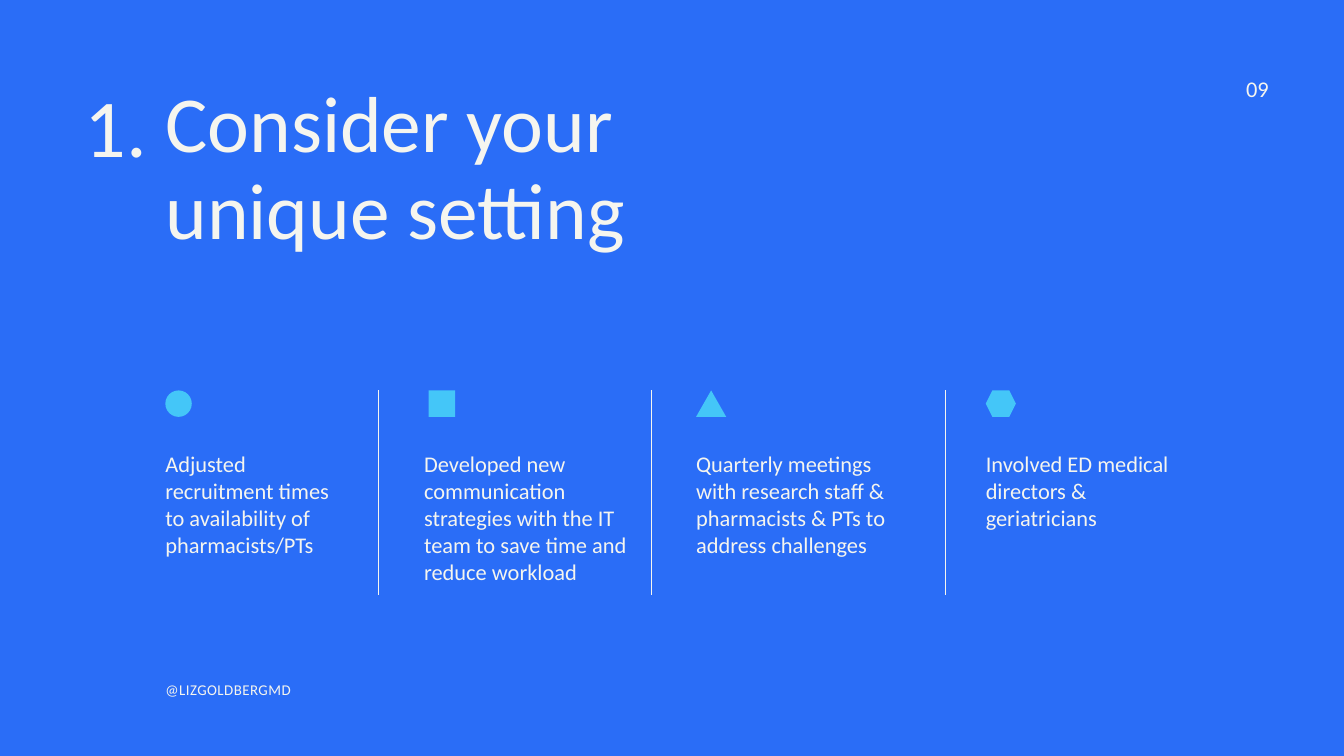
from typing import NamedTuple

from lxml import etree
from pptx import Presentation
from pptx.dml.color import RGBColor
from pptx.enum.shapes import MSO_CONNECTOR, MSO_SHAPE
from pptx.enum.text import MSO_ANCHOR, MSO_AUTO_SIZE, PP_ALIGN
from pptx.oxml.ns import qn
from pptx.shapes.autoshape import Shape
from pptx.slide import Slide
from pptx.util import Cm, Pt

BLUE = RGBColor(0x2A, 0x6D, 0xF7)
CREAM = RGBColor(0xF5, 0xF5, 0xEF)
SKY = RGBColor(0x44, 0xC6, 0xF8)
FONT = "Calibri"

LEFT, CENTER, RIGHT = PP_ALIGN.LEFT, PP_ALIGN.CENTER, PP_ALIGN.RIGHT
TOP = MSO_ANCHOR.TOP
FIXED = MSO_AUTO_SIZE.NONE
STRAIGHT = MSO_CONNECTOR.STRAIGHT
OVAL, SQUARE = MSO_SHAPE.OVAL, MSO_SHAPE.RECTANGLE
PEAK, HEX = MSO_SHAPE.ISOSCELES_TRIANGLE, MSO_SHAPE.HEXAGON

MARGIN = 6.25
ICON_TOP, ICON_SIDE, ICON_WIDE = 14.76, 1, 1.14
TEXT_TOP = 17.02
RULE_TALL = 7.72
RULES = (14.29, 24.63, 35.73)


class Box(NamedTuple):
    left: float
    top: float
    width: float
    height: float


class Style(NamedTuple):
    size: float
    pitch: float
    align: PP_ALIGN = LEFT
    track: int = 0  # letter spacing, hundredths of a point


class Point(NamedTuple):
    left: float
    width: float
    lines: int
    text: str
    icon: MSO_SHAPE
    icon_left: float
    icon_width: float


TITLE = Style(85, 93.5)
NUMBER = Style(88, 105.6, CENTER)
BODY = Style(24, 28.8)
PAGE = Style(24, 24, RIGHT)
HANDLE = Style(16, 22.4, track=50)

POINTS = (
    Point(MARGIN, 6.63, 4,
          "Adjusted recruitment times to availability of pharmacists/PTs",
          OVAL, MARGIN, ICON_SIDE),
    Point(16.03, 7.85, 5,
          "Developed new communication strategies with the IT team "
          "to save time and reduce workload",
          SQUARE, 16.2, ICON_SIDE),
    Point(26.31, 7.85, 4,
          "Quarterly meetings with research staff & pharmacists & PTs "
          "to address challenges",
          PEAK, 26.31, ICON_WIDE),
    Point(37.26, 7.85, 3,
          "Involved ED medical directors & geriatricians",
          HEX, 37.26, ICON_WIDE),
)


def write(shape: Shape, text: str, style: Style) -> None:
    """Fill a shape with one run of text, without insets."""
    frame = shape.text_frame
    frame.word_wrap = True
    frame.auto_size = FIXED
    frame.vertical_anchor = TOP
    frame.margin_left = frame.margin_right = Cm(0)
    frame.margin_top = frame.margin_bottom = Cm(0)
    para = frame.paragraphs[0]
    para.alignment = style.align
    para.line_spacing = Pt(style.pitch)
    run = para.add_run()
    run.text = text
    font = run.font
    font.name = FONT
    font.size = Pt(style.size)
    font.color.rgb = CREAM
    if style.track:
        font._element.set("spc", str(style.track))


def add_text(slide: Slide, box: Box, text: str, style: Style) -> None:
    write(slide.shapes.add_textbox(*map(Cm, box)), text, style)


def add_title(slide: Slide, box: Box, text: str) -> None:
    title = slide.shapes.title
    title.left, title.top, title.width, title.height = map(Cm, box)
    write(title, text, TITLE)


def add_rule(slide: Slide, left: float) -> None:
    """Draw a thin vertical line between two points."""
    rule = slide.shapes.add_connector(
        STRAIGHT, Cm(left), Cm(ICON_TOP), Cm(left), Cm(ICON_TOP + RULE_TALL))
    rule.line.color.rgb = CREAM
    rule.line.width = Pt(0.75)
    etree.SubElement(rule._element.spPr, qn("a:effectLst"))


def add_point(slide: Slide, point: Point) -> None:
    """Draw an icon with its text below."""
    icon = slide.shapes.add_shape(
        point.icon, Cm(point.icon_left), Cm(ICON_TOP),
        Cm(point.icon_width), Cm(ICON_SIDE))
    icon.shadow.inherit = False
    icon.fill.solid()
    icon.fill.fore_color.rgb = SKY
    icon.line.fill.background()
    height = point.lines * Pt(BODY.pitch).cm
    add_text(slide, Box(point.left, TEXT_TOP, point.width, height),
             point.text, BODY)


def main() -> None:
    deck = Presentation()
    deck.slide_width, deck.slide_height = Cm(50.8), Cm(28.58)
    slide = deck.slides.add_slide(deck.slide_layouts.get_by_name("Title Only"))
    back = slide.background.fill
    back.solid()
    back.fore_color.rgb = BLUE

    add_title(slide, Box(MARGIN, 3.07, 22.12, 6.6),
              "Consider your unique setting")
    add_text(slide, Box(2.84, 2.84, 3.07, 3.71), "1.", NUMBER)
    add_text(slide, Box(46.41, 3, 1.55, 0.79), "09", PAGE)
    for left in RULES:
        add_rule(slide, left)
    for point in POINTS:
        add_point(slide, point)
    add_text(slide, Box(MARGIN, 25.6, 19.13, 0.76), "@LIZGOLDBERGMD", HANDLE)
    deck.save("out.pptx")


if __name__ == "__main__":
    main()
